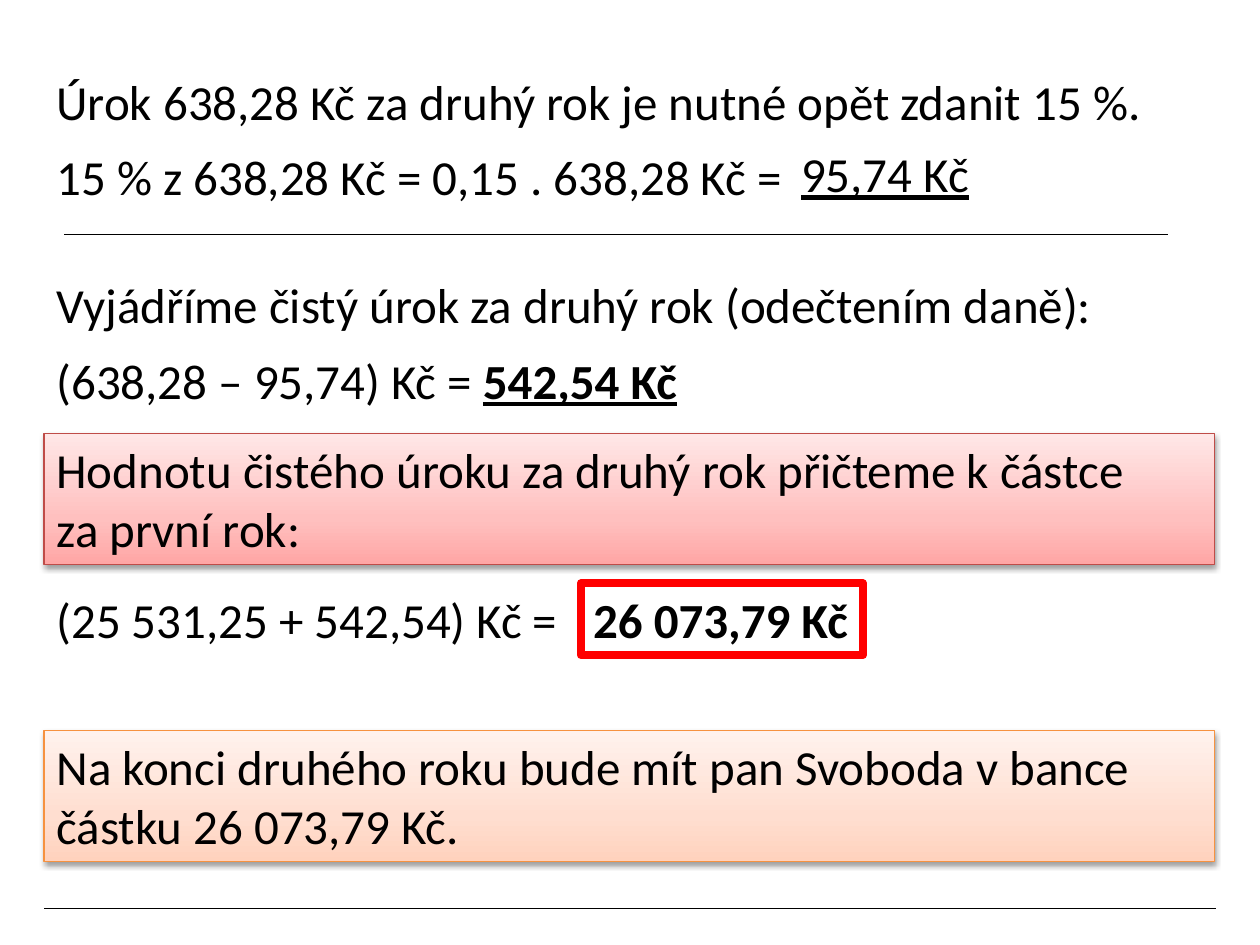
"""Build the slide on taxing the second year's interest."""
from copy import deepcopy
from lxml.etree import SubElement
from pptx import Presentation
from pptx.dml.color import RGBColor
from pptx.enum.shapes import MSO_CONNECTOR, MSO_SHAPE
from pptx.enum.text import MSO_ANCHOR, PP_ALIGN
from pptx.oxml.ns import qn
from pptx.util import Inches, Pt


def rgb(value):
    return RGBColor.from_string(value)


def write(sp, paragraphs, wrap):
    tf = sp.text_frame
    for name, value in {"word_wrap": wrap, "vertical_anchor": MSO_ANCHOR.TOP}.items():
        setattr(tf, name, value)
    for i, runs in enumerate(paragraphs):
        p = tf.add_paragraph() if i else tf.paragraphs[0]
        p.alignment = PP_ALIGN.LEFT
        for text, extra in runs:
            r = p.add_run()
            r.text = text
            for name, value in {"name": "Calibri", "size": Pt(28), **extra}.items():
                setattr(r.font, name, value)
            r.font.color.rgb = rgb("000000")


prs = Presentation()
prs.slide_width, prs.slide_height = Inches(10), Inches(7.5)
s = prs.slides.add_slide(prs.slide_layouts[6])

LEFT, LINE_H = 0.35, 0.57
BOLD, UNDER = {"bold": True}, {"underline": True}

texts = [
    (LEFT, 0.52, 8.91, [("Úrok 638,28 Kč za druhý rok je nutné opět zdanit 15 %.", {})]),
    (LEFT, 1.11, 6.04, [("15 % z 638,28 Kč = 0,15 . 638,28 Kč =", {})]),
    (6.26, 1.09, 1.55, [("95,74 Kč", UNDER)]),
    (LEFT, 2.13, 8.51, [("Vyjádříme čistý úrok za druhý rok (odečtením daně):", {})]),
    (LEFT, 2.73, 5.19, [("(638,28 – 95,74) Kč = ", {}), ("542,54 Kč", {**BOLD, **UNDER})]),
    (LEFT, 4.63, 4.33, [("(25 531,25 + 542,54) Kč =", {})]),
]
for x, y, w, runs in texts:
    sp = s.shapes.add_textbox(Inches(x), Inches(y), Inches(w), Inches(LINE_H))
    write(sp, [runs], False)

panels = [
    (3.44, "BF4C48", ("FFA6A5", "FFC0BF", "FFE7E7"),
     ("Hodnotu čistého úroku za druhý rok přičteme k částce", "za první rok:")),
    (5.8, "F69240", ("FFD2BD", "FFDED0", "FFF2ED"),
     ("Na konci druhého roku bude mít pan Svoboda v bance", "částku 26 073,79 Kč.")),
]
for y, border, colors, lines in panels:
    sp = s.shapes.add_shape(MSO_SHAPE.RECTANGLE, Inches(LEFT), Inches(y), Inches(9.29), Inches(1.04))
    sp.line.color.rgb = rgb(border)
    sp.line.width = Pt(0.75)
    sp.fill.gradient()
    sp.fill.gradient_angle = 90
    stops = sp.fill._fill._gradFill.find(qn("a:gsLst"))
    stops.insert(1, deepcopy(stops[0]))
    for stop, position, color in zip(sp.fill.gradient_stops, (0, 0.35, 1), colors):
        stop.position = position
        stop.color.rgb = rgb(color)
    sp.shadow.inherit = False
    shadow = SubElement(sp._element.spPr.find(qn("a:effectLst")), qn("a:outerShdw"),
                        blurRad=str(Pt(3.1)), dist=str(Pt(1.6)), dir="5400000", rotWithShape="0")
    black = SubElement(shadow, qn("a:srgbClr"), val="000000")
    SubElement(black, qn("a:alpha"), val="38000")
    write(sp, [[(line, {})] for line in lines], True)

sp = s.shapes.add_shape(MSO_SHAPE.RECTANGLE, Inches(4.61), Inches(4.63), Inches(2.24), Inches(LINE_H))
sp.shadow.inherit = False
sp.fill.background()
sp.line.color.rgb = rgb("FF0000")
sp.line.width = Pt(4.5)
SubElement(sp.line._ln, qn("a:round"))
write(sp, [[("26 073,79 Kč", BOLD)]], False)

for x1, x2, y in [(0.51, 9.27, 1.86), (LEFT, 9.65, 7.21)]:
    line = s.shapes.add_connector(MSO_CONNECTOR.STRAIGHT, Inches(x1), Inches(y), Inches(x2), Inches(y))
    line.line.color.rgb = rgb("000000")
    line.line.width = Pt(0.75)
    SubElement(line._element.spPr, qn("a:effectLst"))

prs.save("out.pptx")
